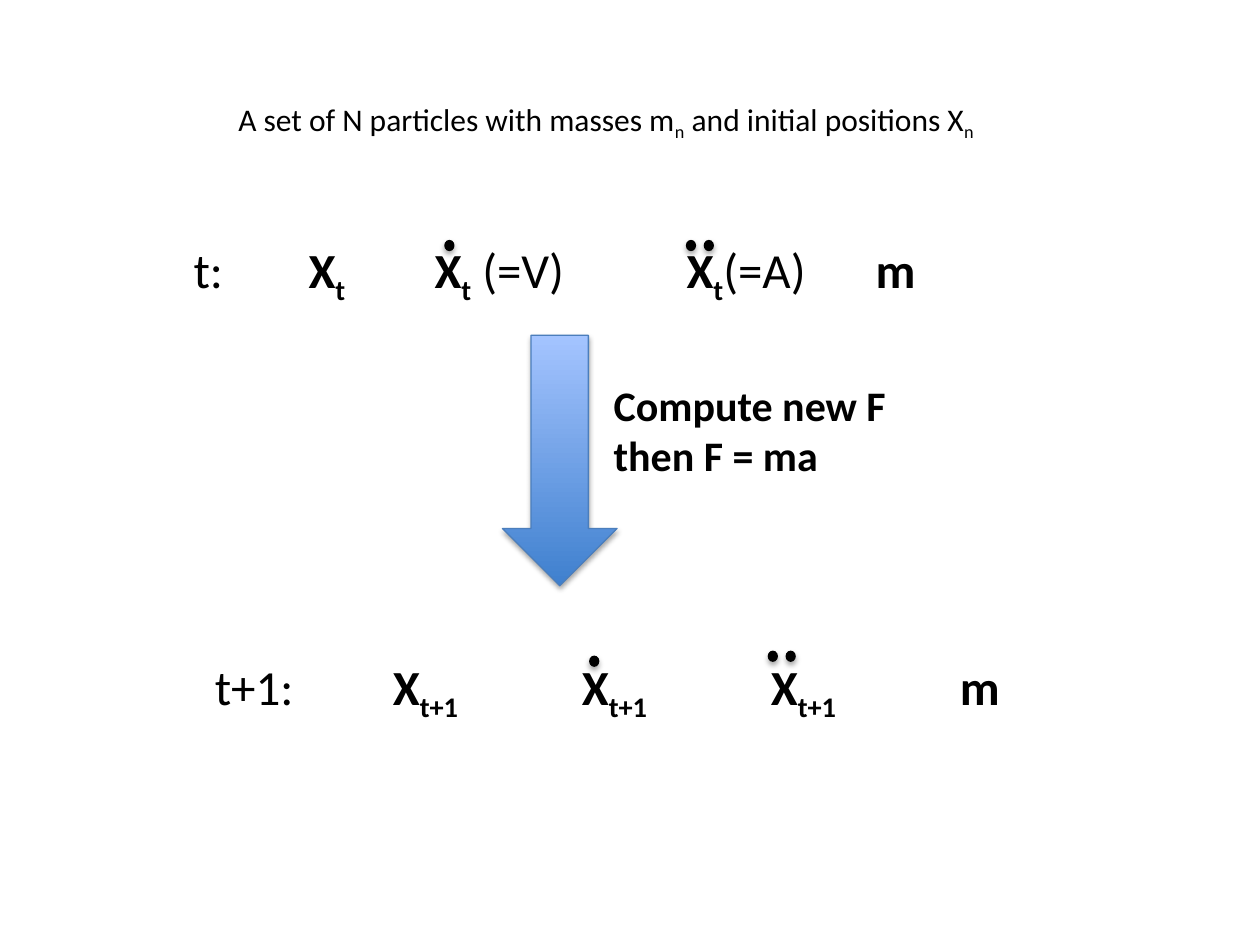
from typing import NamedTuple

from lxml import etree
from pptx import Presentation
from pptx.dml.color import RGBColor
from pptx.enum.shapes import MSO_SHAPE
from pptx.enum.text import MSO_ANCHOR, MSO_AUTO_SIZE, PP_ALIGN
from pptx.oxml.ns import qn
from pptx.util import Cm, Pt

OVAL, DOWN_ARROW = MSO_SHAPE.OVAL, MSO_SHAPE.DOWN_ARROW
TOP, LEFT, GROW = MSO_ANCHOR.TOP, PP_ALIGN.LEFT, MSO_AUTO_SIZE.SHAPE_TO_FIT_TEXT
TITLE_ONLY = 5
FONT = "Calibri"
COLORS = {"text": "000000", "arrow_line": "4B7EBC",
          "arrow_dark": "3F80CE", "arrow_light": "A4C4FF"}
DOT_W, DOT_H = 0.18, 0.2


class Run(NamedTuple):
    text: str
    bold: bool = False
    sub: bool = False


class Dot(NamedTuple):
    x: float
    y: float


class StateRow(NamedTuple):
    x: float
    y: float
    tabs: list[float]
    runs: list[Run]
    dots: list[Dot]


def rgb(name: str) -> RGBColor:
    return RGBColor.from_string(COLORS[name])


def write(p, runs: list[Run], size: float) -> None:
    for run in runs:
        r = p.add_run()
        r.text = run.text
        r.font.name, r.font.size, r.font.bold = FONT, Pt(size), run.bold
        r.font.color.rgb = rgb("text")
        if run.sub:
            r._r.get_or_add_rPr().set("baseline", "-25000")


def add_box(slide, x: float, y: float, w: float, h: float, wrap: bool):
    tf = slide.shapes.add_textbox(Cm(x), Cm(y), Cm(w), Cm(h)).text_frame
    tf.word_wrap, tf.auto_size = wrap, GROW
    return tf


def set_tabs(p, stops: list[float]) -> None:
    tabs = etree.SubElement(p._p.get_or_add_pPr(), qn("a:tabLst"))
    for stop in stops:
        etree.SubElement(tabs, qn("a:tab"), pos=str(Cm(stop)), algn="l")


def add_shape(slide, kind, x: float, y: float, w: float, h: float, line: str):
    """Add an outlined shape with a soft shadow below it."""
    s = slide.shapes.add_shape(kind, Cm(x), Cm(y), Cm(w), Cm(h))
    s.line.color.rgb, s.line.width = rgb(line), Pt(0.75)
    s.shadow.inherit = False
    effects = s._element.spPr.find(qn("a:effectLst"))
    shadow = etree.SubElement(effects, qn("a:outerShdw"), blurRad=str(Pt(3.1)),
                              dist=str(Pt(1.8)), dir="5400000", rotWithShape="0")
    color = etree.SubElement(shadow, qn("a:srgbClr"), val=COLORS["text"])
    etree.SubElement(color, qn("a:alpha"), val="35000")
    return s


def add_state(slide, row: StateRow) -> None:
    p = add_box(slide, row.x, row.y, 18.42, 1.45, True).paragraphs[0]
    set_tabs(p, row.tabs)
    write(p, row.runs, 28)
    for dot in row.dots:
        s = add_shape(slide, OVAL, dot.x, dot.y, DOT_W, DOT_H, "text")
        s.fill.solid()
        s.fill.fore_color.rgb = rgb("text")


ROWS = [
    StateRow(3.43, 4.7, [2.54, 5.08, 10.16, 13.97],
             [Run(" t:\t"), Run("X", True), Run("t\t", True, True),
              Run("X", True), Run("t", True, True), Run(" (=V)\t"),
              Run("X", True), Run("t", True, True), Run("(=A)\t"),
              Run("m", True)],
             [Dot(8.97, 4.85), Dot(13.84, 4.85), Dot(14.2, 4.85)]),
    StateRow(3.86, 13.11, [3.81 * n for n in range(1, 5)],
             [Run(" t+1:\t")]
             + [Run("X", True), Run("t+1\t", True, True)] * 3
             + [Run("m", True)],
             [Dot(11.89, 13.23), Dot(15.49, 13.13), Dot(15.85, 13.13)]),
]


def main() -> None:
    prs = Presentation()
    prs.slide_width, prs.slide_height = Cm(25.4), Cm(19.05)
    slide = prs.slides.add_slide(prs.slide_layouts[TITLE_ONLY])

    # Title
    title = slide.shapes.title
    title.left, title.top, title.width, title.height = (
        Cm(4.55), Cm(1.88), Cm(15.77), Cm(1.02))
    tf = title.text_frame
    tf.word_wrap, tf.auto_size, tf.vertical_anchor = False, GROW, TOP
    p = tf.paragraphs[0]
    p.alignment = LEFT
    write(p, [Run("A set of N particles with masses m"), Run("n", sub=True),
              Run(" and initial positions X"), Run("n", sub=True)], 18)

    # States before and after the time step
    for row in ROWS:
        add_state(slide, row)

    # Step arrow
    arrow = add_shape(slide, DOWN_ARROW, 10.13, 6.76, 2.31, 5.05, "arrow_line")
    arrow.fill.gradient()
    arrow.fill.gradient_angle = 90
    for stop, name in zip(arrow.fill.gradient_stops, ("arrow_dark", "arrow_light")):
        stop.color.rgb = rgb(name)

    # Step label
    tf = add_box(slide, 12.12, 7.52, 6.3, 2.31, False)
    write(tf.paragraphs[0], [Run("Compute new F", True)], 24)
    write(tf.add_paragraph(), [Run("then F = ma", True)], 24)

    prs.save("out.pptx")


if __name__ == "__main__":
    main()
